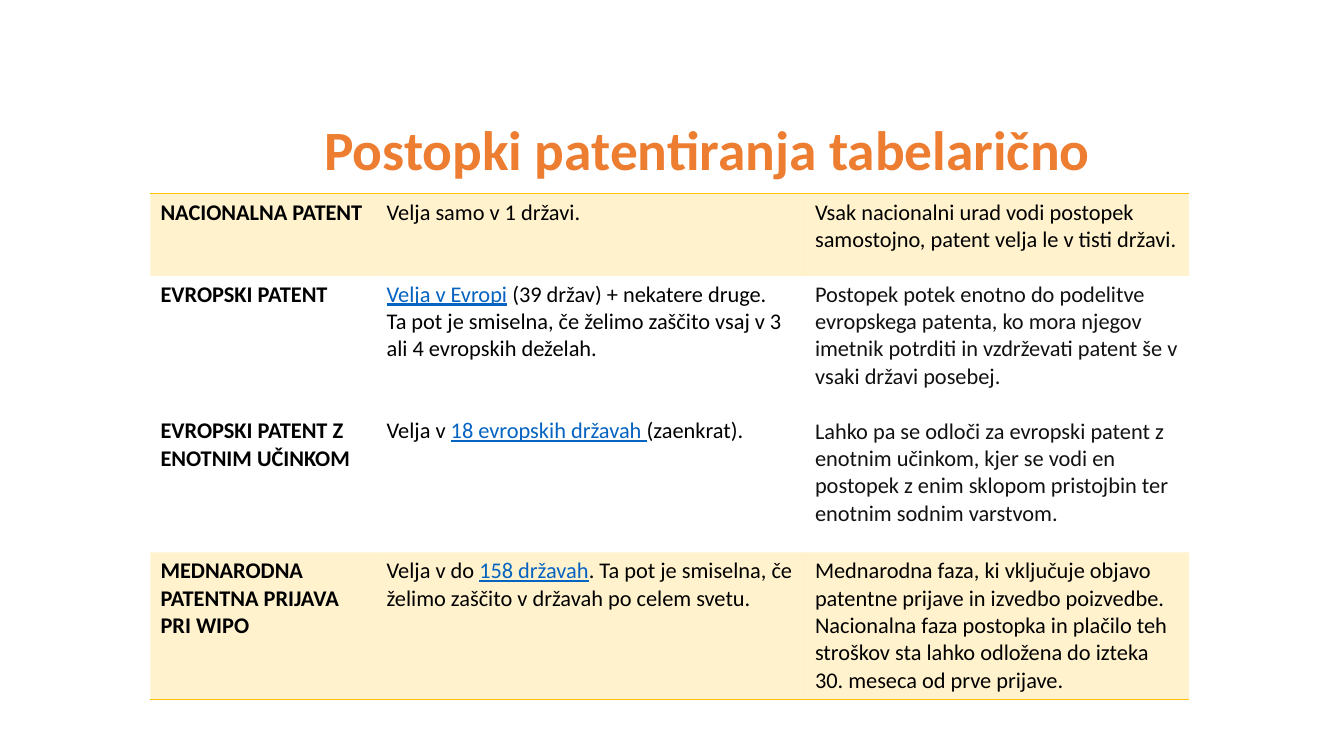
from dataclasses import dataclass

from lxml.etree import SubElement
from pptx import Presentation
from pptx.dml.color import RGBColor
from pptx.enum.text import MSO_ANCHOR as Anchor, MSO_AUTO_SIZE as AutoSize, PP_ALIGN as Align
from pptx.oxml.ns import qn
from pptx.util import Pt

COLORS = {"title": "ED7D31", "text": "000000", "soft": "111111", "link": "0563C1", "gold": "FFC000"}
NO_GRID_STYLE = "{2D5ABB26-0587-4C30-8999-92F81FD0307C}"
LINE = 19.53
COLUMNS = (161.5, 306, 274.5)
ROWS = (58.5, 197.5, 105)


@dataclass(frozen=True)
class Phrase:
    text: str
    color: str = "text"
    bold: bool = False
    underline: bool = False
    size: float = 16


@dataclass(frozen=True)
class Line:
    phrases: tuple[Phrase, ...]
    skipped: int = 0


@dataclass(frozen=True)
class Procedure:
    cells: tuple[tuple[Line, ...], ...]
    shaded: bool = False
    edge: str = ""


def plain(text: str, skipped: int = 0, color: str = "text", bold: bool = False) -> Line:
    return Line((Phrase(text, color, bold),), skipped)


def heading(text: str, skipped: int = 0) -> Line:
    return plain(text, skipped, bold=True)


def linked(before: str, link: str, after: str, skipped: int = 0) -> Line:
    phrases = (Phrase(before), Phrase(link, "link", underline=True), Phrase(after))
    return Line(tuple(phrase for phrase in phrases if phrase.text), skipped)


PROCEDURES = (
    Procedure((
        (heading("NACIONALNA PATENT"),),
        (plain("Velja samo v 1 državi."),),
        (plain("Vsak nacionalni urad vodi postopek samostojno, patent velja le v tisti državi."),),
    ), shaded=True, edge="a:lnT"),
    Procedure((
        (heading("EVROPSKI PATENT"), heading("EVROPSKI PATENT Z ENOTNIM UČINKOM", 4)),
        (linked("", "Velja v Evropi", " (39 držav) + nekatere druge."),
         plain("Ta pot je smiselna, če želimo zaščito vsaj v 3 ali 4 evropskih deželah."),
         linked("Velja v ", "18 evropskih državah ", "(zaenkrat).", 2)),
        (plain("Postopek potek enotno do podelitve evropskega patenta, ko mora njegov imetnik "
               "potrditi in vzdrževati patent še v vsaki državi posebej.", color="soft"),
         plain("Lahko pa se odloči za evropski patent z enotnim učinkom, kjer se vodi en postopek "
               "z enim sklopom pristojbin ter enotnim sodnim varstvom.", 1, "soft")),
    )),
    Procedure((
        (heading("MEDNARODNA"), heading("PATENTNA PRIJAVA PRI WIPO")),
        (linked("Velja v do ", "158 državah",
                ". Ta pot je smiselna, če želimo zaščito v državah po celem svetu."),),
        (plain("Mednarodna faza, ki vključuje objavo patentne prijave in izvedbo poizvedbe. "
               "Nacionalna faza postopka in plačilo teh stroškov sta lahko odložena do izteka "
               "30. meseca od prve prijave."),),
    ), shaded=True, edge="a:lnB"),
)


def apply(target, values: dict) -> None:
    for name, value in values.items():
        setattr(target, name, value)


def write_phrase(paragraph, phrase: Phrase) -> None:
    run = paragraph.add_run()
    run.text = phrase.text
    apply(run.font, {"name": "Calibri", "size": Pt(phrase.size), "bold": phrase.bold,
                     "underline": phrase.underline})
    run.font.color.rgb = RGBColor.from_string(COLORS[phrase.color])


def write_lines(frame, lines: tuple[Line, ...]) -> None:
    for index, line in enumerate(lines):
        paragraph = frame.add_paragraph() if index else frame.paragraphs[0]
        if line.skipped:
            paragraph.space_before = Pt(line.skipped * LINE)
        for phrase in line.phrases:
            write_phrase(paragraph, phrase)


def format_cell(cell, procedure: Procedure) -> None:
    properties = cell._tc.get_or_add_tcPr()
    if procedure.edge:
        border = SubElement(properties, qn(procedure.edge), w=str(Pt(1)))
        SubElement(SubElement(border, qn("a:solidFill")), qn("a:srgbClr"), val=COLORS["gold"])
    if procedure.shaded:
        cell.fill.solid()
        cell.fill.fore_color.rgb = RGBColor.from_string(COLORS["gold"])
        gold = properties.find(f"{qn('a:solidFill')}/{qn('a:srgbClr')}")
        SubElement(gold, qn("a:alpha"), val="20000")
    else:
        cell.fill.background()


def add_title(slide) -> None:
    title = slide.shapes.title
    apply(title, {"left": Pt(66), "top": Pt(85), "width": Pt(878.5), "height": Pt(48)})
    frame = title.text_frame
    apply(frame, {"auto_size": AutoSize.NONE, "word_wrap": True, "vertical_anchor": Anchor.MIDDLE})
    apply(frame.paragraphs[0], {"alignment": Align.CENTER, "line_spacing": 0.9})
    write_phrase(frame.paragraphs[0],
                 Phrase("Postopki patentiranja tabelarično", "title", bold=True, size=39.6))


def add_procedures(slide) -> None:
    holder = slide.shapes.add_table(len(ROWS), len(COLUMNS), Pt(107.5), Pt(138.5),
                                    Pt(sum(COLUMNS)), Pt(sum(ROWS)))
    holder.element.find(f".//{qn('a:tableStyleId')}").text = NO_GRID_STYLE
    table = holder.table
    apply(table, {"first_row": False, "horz_banding": False})
    for column, width in zip(table.columns, COLUMNS):
        column.width = Pt(width)
    for row, height, procedure in zip(table.rows, ROWS, PROCEDURES):
        row.height = Pt(height)
        for cell, lines in zip(row.cells, procedure.cells):
            write_lines(cell.text_frame, lines)
            format_cell(cell, procedure)


def main() -> None:
    """Build the slide comparing patenting procedures."""
    deck = Presentation()
    apply(deck, {"slide_width": Pt(960), "slide_height": Pt(540)})
    slide = deck.slides.add_slide(deck.slide_layouts[5])
    add_title(slide)
    add_procedures(slide)
    deck.save("out.pptx")


if __name__ == "__main__":
    main()
